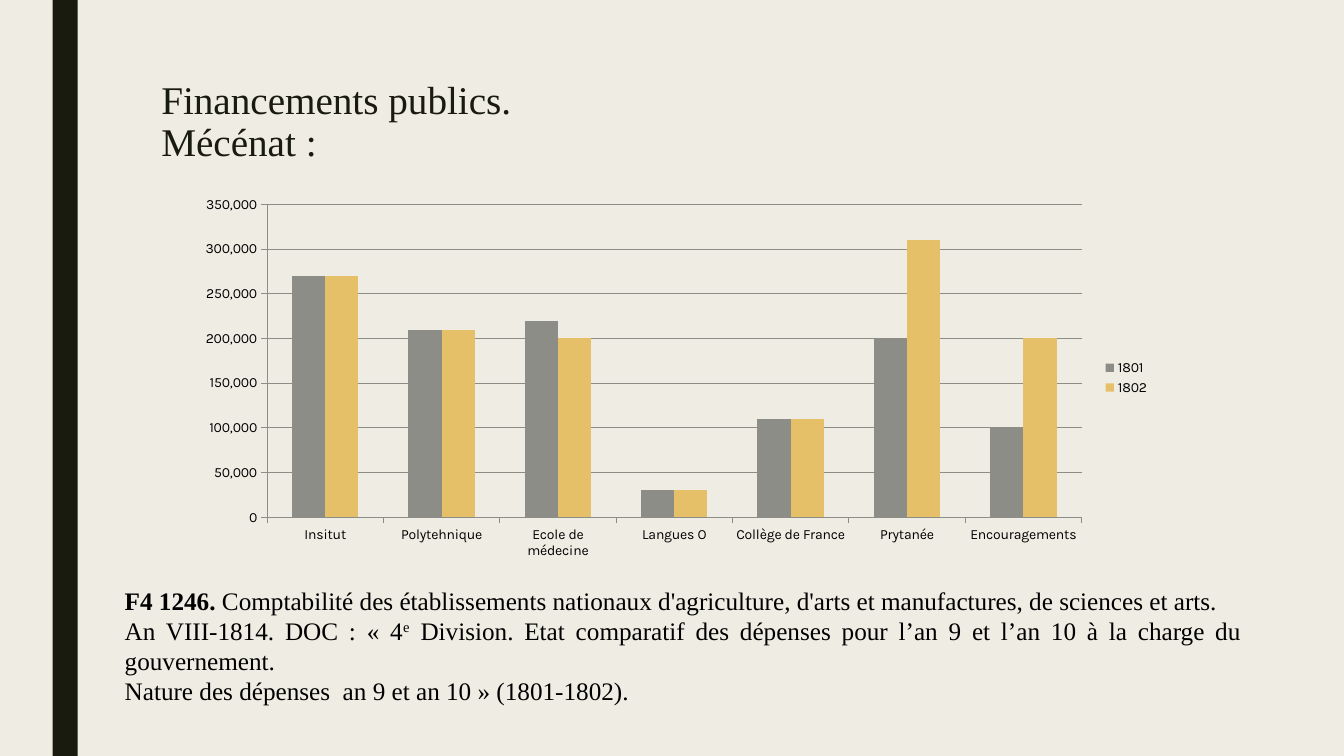
from dataclasses import dataclass

from pptx import Presentation
from pptx.chart.data import CategoryChartData
from pptx.dml.color import RGBColor
from pptx.enum.chart import XL_CHART_TYPE, XL_LEGEND_POSITION, XL_TICK_MARK
from pptx.enum.shapes import MSO_SHAPE
from pptx.enum.text import MSO_ANCHOR, MSO_AUTO_SIZE, PP_ALIGN
from pptx.oxml.ns import qn
from pptx.util import Pt

COLUMNS = XL_CHART_TYPE.COLUMN_CLUSTERED
LEGEND_RIGHT = XL_LEGEND_POSITION.RIGHT
TICK_OUTSIDE = XL_TICK_MARK.OUTSIDE
RECTANGLE = MSO_SHAPE.RECTANGLE
TOP = MSO_ANCHOR.TOP
NO_AUTOFIT = MSO_AUTO_SIZE.NONE
LEFT = PP_ALIGN.LEFT
JUSTIFY = PP_ALIGN.JUSTIFY
TITLE_ONLY = 5


@dataclass(frozen=True)
class Theme:
    background: RGBColor = RGBColor(0xEF, 0xED, 0xE3)
    dark: RGBColor = RGBColor(0x19, 0x1B, 0x0E)
    text: RGBColor = RGBColor(0, 0, 0)
    grid: RGBColor = RGBColor(0x8C, 0x8D, 0x86)
    series: tuple = (RGBColor(0x8C, 0x8D, 0x86), RGBColor(0xE6, 0xC0, 0x69))
    text_font: str = "Times New Roman"
    chart_font: str = "Karla"
    title_size: int = 28
    body_size: int = 18
    chart_size: int = 10


THEME = Theme()

# Boxes: left, top, width, height in points
BAND_BOX = (37.5, 0, 18, 540)
TITLE_BOX = (108, 54, 756, 117)
CHART_BOX = (133, 135, 695.5, 269.5)
SOURCE_BOX = (82, 414.3, 812, 117)

INSTITUTIONS = ("Insitut", "Polytehnique", "Ecole de médecine", "Langues O",
                "Collège de France", "Prytanée", "Encouragements")
EXPENSES = {
    "1801": (270000, 210000, 220000, 30000, 110000, 200000, 100000),
    "1802": (270000, 210000, 200000, 30000, 110000, 310000, 200000),
}

# Each paragraph is a list of (text, style) pieces
SOURCE_TEXT = (
    (("F4 1246. ", "bold"),
     ("Comptabilité des établissements nationaux d'agriculture, d'arts et "
      "manufactures, de sciences et arts. ", "")),
    (("An VIII-1814. DOC : « 4", ""),
     ("e", "superscript"),
     (" Division. Etat comparatif des dépenses pour l’an 9 et l’an 10 à la "
      "charge du gouvernement. ", "")),
    (("Nature des dépenses  an 9 et an 10 » (1801-1802).", ""),),
)


def in_points(box):
    return [Pt(length) for length in box]


def style_font(font, name, size, color):
    font.name = name
    font.size = Pt(size)
    font.color.rgb = color


def add_band(slide, box):
    band = slide.shapes.add_shape(RECTANGLE, *in_points(box))
    band.shadow.inherit = False
    band.fill.solid()
    band.fill.fore_color.rgb = THEME.dark
    band.line.fill.background()


def set_title(slide, box, text):
    title = slide.shapes.title
    title.left, title.top, title.width, title.height = in_points(box)
    frame = title.text_frame
    frame.auto_size = NO_AUTOFIT
    frame.vertical_anchor = TOP
    paragraph = frame.paragraphs[0]
    paragraph.text = text
    paragraph.alignment = LEFT
    paragraph.line_spacing = 0.89
    for run in paragraph.runs:
        style_font(run.font, THEME.text_font, THEME.title_size, THEME.dark)


def add_expense_chart(slide, box):
    data = CategoryChartData(number_format="#,##0")
    data.categories = INSTITUTIONS
    for year, amounts in EXPENSES.items():
        data.add_series(year, amounts)
    chart = slide.shapes.add_chart(COLUMNS, *in_points(box), data).chart
    style_font(chart.font, THEME.chart_font, THEME.chart_size, THEME.text)
    chart.has_title = False
    chart.has_legend = True
    chart.legend.position = LEGEND_RIGHT
    chart.legend.include_in_layout = False

    # Columns
    plot = chart.plots[0]
    plot.gap_width = 150
    plot.overlap = 0
    plot.vary_by_categories = False
    for series, color in zip(plot.series, THEME.series):
        series.format.fill.solid()
        series.format.fill.fore_color.rgb = color

    # Axes and gridlines
    amounts_axis = chart.value_axis
    amounts_axis.minimum_scale = 0
    amounts_axis.maximum_scale = 350000
    amounts_axis.major_unit = 50000
    amounts_axis.tick_labels.number_format = "#,##0"
    amounts_axis.tick_labels.number_format_is_linked = False
    amounts_axis.has_major_gridlines = True
    for axis in (chart.category_axis, amounts_axis):
        axis.major_tick_mark = TICK_OUTSIDE
    for lined in (chart.category_axis, amounts_axis, amounts_axis.major_gridlines):
        lined.format.line.color.rgb = THEME.grid
        lined.format.line.width = Pt(0.75)


def add_source(slide, box):
    frame = slide.shapes.add_textbox(*in_points(box)).text_frame
    frame.word_wrap = True
    for index, pieces in enumerate(SOURCE_TEXT):
        paragraph = frame.add_paragraph() if index else frame.paragraphs[0]
        paragraph.alignment = JUSTIFY
        for text, style in pieces:
            run = paragraph.add_run()
            run.text = text
            style_font(run.font, THEME.text_font, THEME.body_size, THEME.text)
            run.font.bold = style == "bold"
            if style == "superscript":
                run._r.find(qn("a:rPr")).set("baseline", "30000")


def build_funding_slide(presentation):
    slide = presentation.slides.add_slide(presentation.slide_layouts[TITLE_ONLY])
    slide.background.fill.solid()
    slide.background.fill.fore_color.rgb = THEME.background
    add_band(slide, BAND_BOX)
    set_title(slide, TITLE_BOX, "Financements publics.\nMécénat :")
    add_expense_chart(slide, CHART_BOX)
    add_source(slide, SOURCE_BOX)


def main():
    presentation = Presentation()
    presentation.slide_width = Pt(960)
    presentation.slide_height = Pt(540)
    build_funding_slide(presentation)
    presentation.save("out.pptx")


if __name__ == "__main__":
    main()
